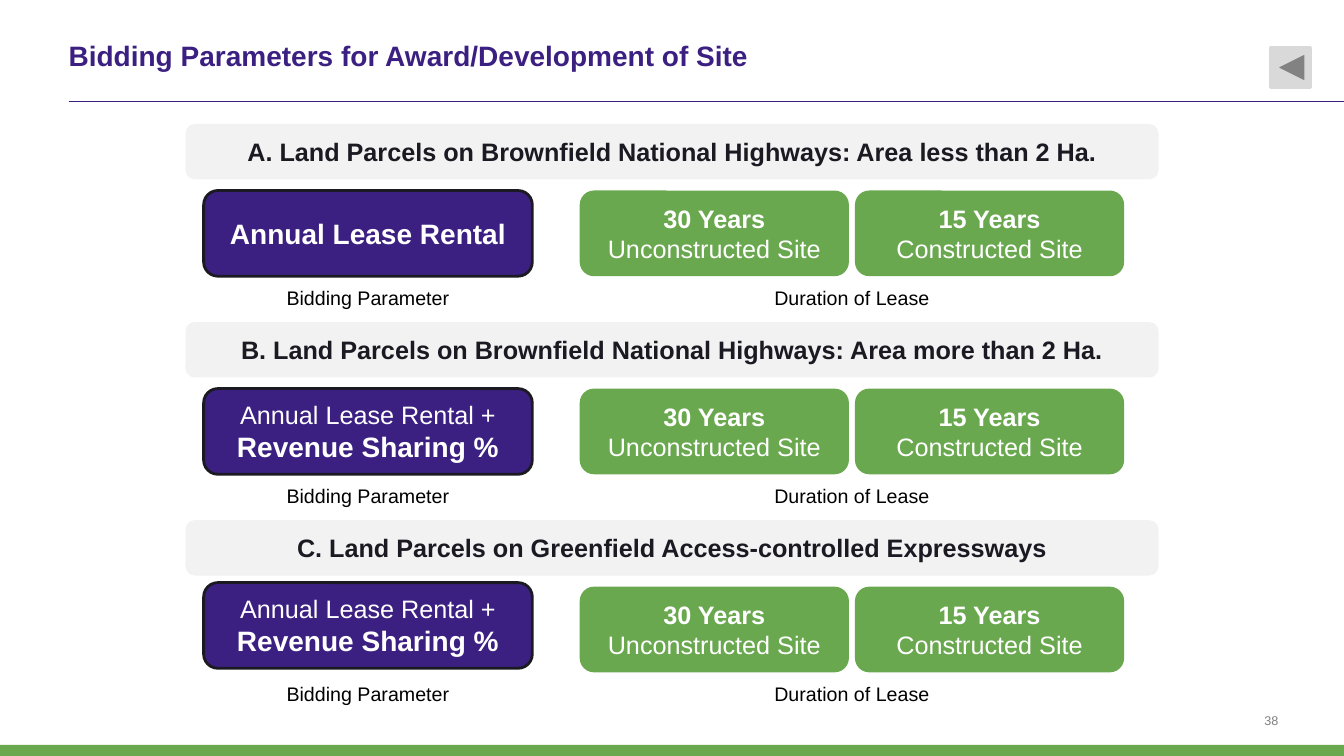
from dataclasses import dataclass
from lxml import etree
from pptx import Presentation
from pptx.dml.color import RGBColor
from pptx.enum import shapes, text
from pptx.oxml import ns
from pptx.util import Inches, Pt


@dataclass(frozen=True)
class Theme:
    font: str = "Arial"
    purple: RGBColor = RGBColor(0x3B, 0x20, 0x82)
    green: RGBColor = RGBColor(0x6A, 0xA8, 0x4F)
    ink: RGBColor = RGBColor(0x1B, 0x1A, 0x22)
    black: RGBColor = RGBColor(0, 0, 0)
    white: RGBColor = RGBColor(255, 255, 255)
    grey: RGBColor = RGBColor(0x80, 0x80, 0x80)
    silver: RGBColor = RGBColor(0xD9, 0xD9, 0xD9)
    large: int = 20
    medium: int = 18
    caption: int = 14
    small: int = 9


theme = Theme()
deck = Presentation()
deck.slide_width, deck.slide_height = Inches(13.33), Inches(7.5)
slide = deck.slides.add_slide(deck.slide_layouts[5])


def add_box(kind, left, top, width, height, fill, outline=None):
    box = slide.shapes.add_shape(kind, Inches(left), Inches(top), Inches(width), Inches(height))
    box.shadow.inherit = False
    box.fill.solid()
    box.fill.fore_color.rgb = fill
    if outline is None:
        box.line.fill.background()
    else:
        box.line.color.rgb = outline
        box.line.width = Pt(2)
    return box


def write(holder, paragraphs, color, align=text.PP_ALIGN.CENTER, anchor=text.MSO_ANCHOR.MIDDLE, inset=0.06):
    frame = holder.text_frame
    frame.word_wrap = True
    frame.vertical_anchor = anchor
    frame.margin_left = frame.margin_right = frame.margin_top = frame.margin_bottom = Inches(inset)
    for index, runs in enumerate(paragraphs):
        paragraph = frame.add_paragraph() if index else frame.paragraphs[0]
        paragraph.alignment = align
        paragraph.font.name = theme.font
        paragraph.font.color.rgb = color
        for wording, size, bold in runs:
            run = paragraph.add_run()
            run.text = wording
            font = paragraph.font if len(runs) == 1 else run.font
            font.size, font.bold = Pt(size), bold


rule = slide.shapes.add_connector(
    shapes.MSO_CONNECTOR.STRAIGHT, Inches(0.68), Inches(1.01), Inches(13.33), Inches(1.01))
rule.line.color.rgb = theme.purple
rule.line.width = Pt(1)
etree.SubElement(rule.element.spPr, ns.qn("a:effectLst"))

page_number = slide.shapes.add_textbox(Inches(11.54), Inches(7.03), Inches(1.14), Inches(0.19))
write(page_number, [[("38", theme.small, False)]], theme.grey,
      text.PP_ALIGN.RIGHT, text.MSO_ANCHOR.BOTTOM, 0)
add_box(shapes.MSO_SHAPE.RECTANGLE, 0, 7.39, 13.33, 0.11, theme.green)

title = slide.shapes.title
title.left, title.top, title.width, title.height = Inches(0.68), Inches(0.12), Inches(12.12), Inches(0.86)
write(title, [[("Bidding Parameters for Award/Development of Site", theme.large, True)]],
      theme.purple, text.PP_ALIGN.LEFT, inset=0)

rental = [("Annual Lease Rental", theme.large, True)]
rental_and_share = [("Annual Lease Rental + ", theme.medium, False), ("Revenue Sharing %", theme.large, True)]
categories = [
    ("A. Land Parcels on Brownfield National Highways: Area less than 2 Ha.", rental, 0.66),
    ("B. Land Parcels on Brownfield National Highways: Area more than 2 Ha.", rental_and_share, 0.66),
    ("C. Land Parcels on Greenfield Access-controlled Expressways", rental_and_share, 0.62),
]
leases = [("30 Years", "Unconstructed Site"), ("15 Years", "Constructed Site")]
captions = [("Bidding Parameter", 2.02, 3.26), ("Duration of Lease", 5.75, 5.4)]
first_top, last_top = 1.23, 5.16
pitch = (last_top - first_top) / (len(categories) - 1)
rounded = shapes.MSO_SHAPE.ROUNDED_RECTANGLE

for row, (heading, parameter, parameter_drop) in enumerate(categories):
    top = first_top + row * pitch
    banner = add_box(rounded, 1.84, top, 9.65, 0.55, theme.grey)
    tint = banner.element.spPr.find(ns.qn("a:solidFill"))[0]
    etree.SubElement(tint, ns.qn("a:alpha"), val="10000")
    write(banner, [[(heading, theme.medium, True)]], theme.ink)

    for caption, left, width in captions:
        label = slide.shapes.add_textbox(Inches(left), Inches(top + 1.55), Inches(width), Inches(0.5))
        write(label, [[(caption, theme.caption, False)]], theme.black, anchor=text.MSO_ANCHOR.TOP)

    bid = add_box(rounded, 2.02, top + parameter_drop, 3.26, 0.85, theme.purple, theme.ink)
    write(bid, [parameter], theme.white)

    for column, (years, site) in enumerate(leases):
        lease = add_box(rounded, 5.75 + column * 2.73, top + 0.66, 2.67, 0.85, theme.green)
        write(lease, [[(years, theme.medium, True)], [(site, theme.medium, False)]], theme.white)

back_button = add_box(shapes.MSO_SHAPE.ACTION_BUTTON_FORWARD_OR_NEXT,
                      12.6, 0.47, 0.4, 0.4, theme.silver, theme.silver)
back_button.rotation = 180

deck.save("out.pptx")
